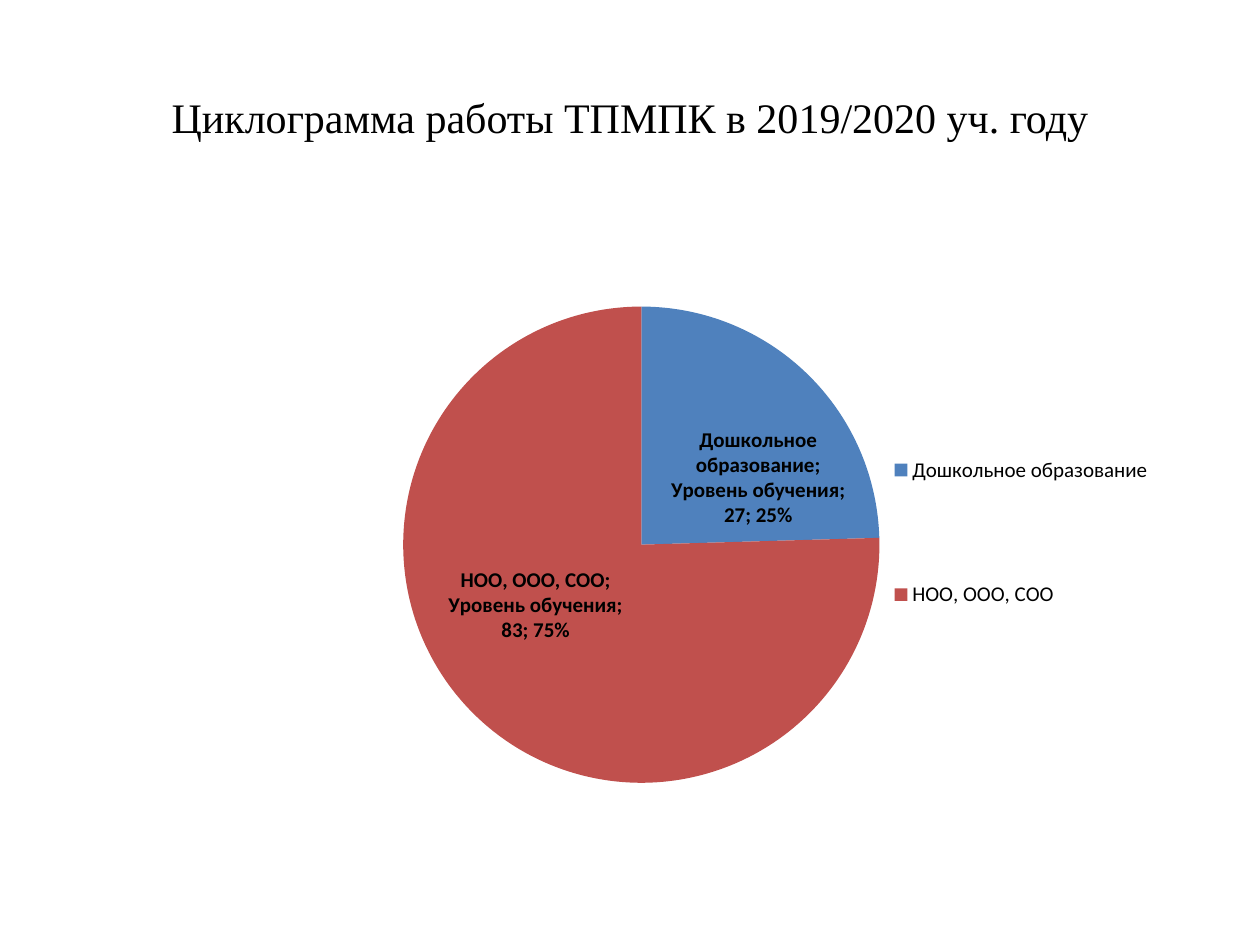
import dataclasses

import lxml.etree
import pptx
import pptx.chart.data
import pptx.dml.color
import pptx.enum.chart
import pptx.enum.text
import pptx.oxml.ns
import pptx.util
from pptx.util import Inches


@dataclasses.dataclass(frozen=True)
class Theme:
    text: str = "000000"
    slices: tuple = ("4F81BD", "C0504D")
    title_font: str = "Times New Roman"
    chart_font: str = "Calibri"
    title_size: int = 24
    chart_size: int = 18
    label_size: int = 12


THEME = Theme()
LEVELS = {"Дошкольное образование": 27, "НОО, ООО, СОО": 83}
LABEL_SHIFTS = ((0.03, 0.03), (-0.02, -0.04))


def style_font(font, name, size, bold=False):
    font.name = name
    font.size = pptx.util.Pt(size)
    font.bold = bold
    font.color.rgb = pptx.dml.color.RGBColor.from_string(THEME.text)


def add_child(parent, tag, value=None):
    child = lxml.etree.SubElement(parent, pptx.oxml.ns.qn(tag))
    if value is not None:
        child.set("val", str(value))
    return child


def make_layout(parent, **settings):
    for old in parent.findall(pptx.oxml.ns.qn("c:layout")):
        parent.remove(old)
    layout = add_child(parent, "c:layout")
    manual = add_child(layout, "c:manualLayout")
    for name, value in settings.items():
        add_child(manual, f"c:{name}", value)
    return layout


def add_title(page, text):
    box = page.shapes.add_textbox(Inches(0.5), Inches(0.3), Inches(9), Inches(1.25))
    frame = box.text_frame
    frame.word_wrap = True
    frame.vertical_anchor = pptx.enum.text.MSO_ANCHOR.MIDDLE
    frame.text = text
    para = frame.paragraphs[0]
    para.alignment = pptx.enum.text.PP_ALIGN.CENTER
    style_font(para.runs[0].font, THEME.title_font, THEME.title_size)


def style_slice(series, index, color, shift):
    point = series.points[index]
    point.format.fill.solid()
    point.format.fill.fore_color.rgb = pptx.dml.color.RGBColor.from_string(color)
    label = point.data_label
    style_font(label.font, THEME.chart_font, THEME.label_size, bold=True)
    label.position = pptx.enum.chart.XL_LABEL_POSITION.CENTER
    element = series._element.xpath(f"c:dLbls/c:dLbl[c:idx/@val='{index}']")[0]
    for name in ("showVal", "showCatName", "showSerName", "showPercent"):
        element.find(pptx.oxml.ns.qn(f"c:{name}")).set("val", "1")
    add_child(element, "c:separator").text = "; "
    element.insert(1, make_layout(element, x=shift[0], y=shift[1]))


def add_legend(chart):
    chart.has_legend = True
    legend = chart.legend
    legend.position = pptx.enum.chart.XL_LEGEND_POSITION.RIGHT
    legend.include_in_layout = False
    style_font(legend.font, THEME.chart_font, THEME.label_size)
    element = legend._element
    layout = make_layout(element, xMode="edge", yMode="edge", x=0.73, y=0.22, w=0.23, h=0.56)
    element.find(pptx.oxml.ns.qn("c:legendPos")).addnext(layout)


def add_pie(page, series_name, levels):
    data = pptx.chart.data.CategoryChartData()
    data.categories = list(levels)
    data.add_series(series_name, list(levels.values()))
    chart = page.shapes.add_chart(
        pptx.enum.chart.XL_CHART_TYPE.PIE,
        Inches(0.5), Inches(1.75), Inches(9), Inches(4.95), data,
    ).chart
    chart.has_title = False
    style_font(chart.font, THEME.chart_font, THEME.chart_size)
    plot = chart.plots[0]
    plot.vary_by_categories = True
    for index, (color, shift) in enumerate(zip(THEME.slices, LABEL_SHIFTS)):
        style_slice(plot.series[0], index, color, shift)
    area = chart._chartSpace.chart.plotArea
    area.insert(0, make_layout(
        area, layoutTarget="inner", xMode="edge", yMode="edge",
        x=0.3, y=0.135, w=0.42, h=0.77,
    ))
    add_legend(chart)


def main():
    deck = pptx.Presentation()
    deck.slide_width, deck.slide_height = Inches(10), Inches(7.5)
    page = deck.slides.add_slide(deck.slide_layouts[6])
    add_title(page, "Циклограмма работы ТПМПК в 2019/2020 уч. году")
    add_pie(page, "Уровень обучения", LEVELS)
    deck.save("out.pptx")


if __name__ == "__main__":
    main()
